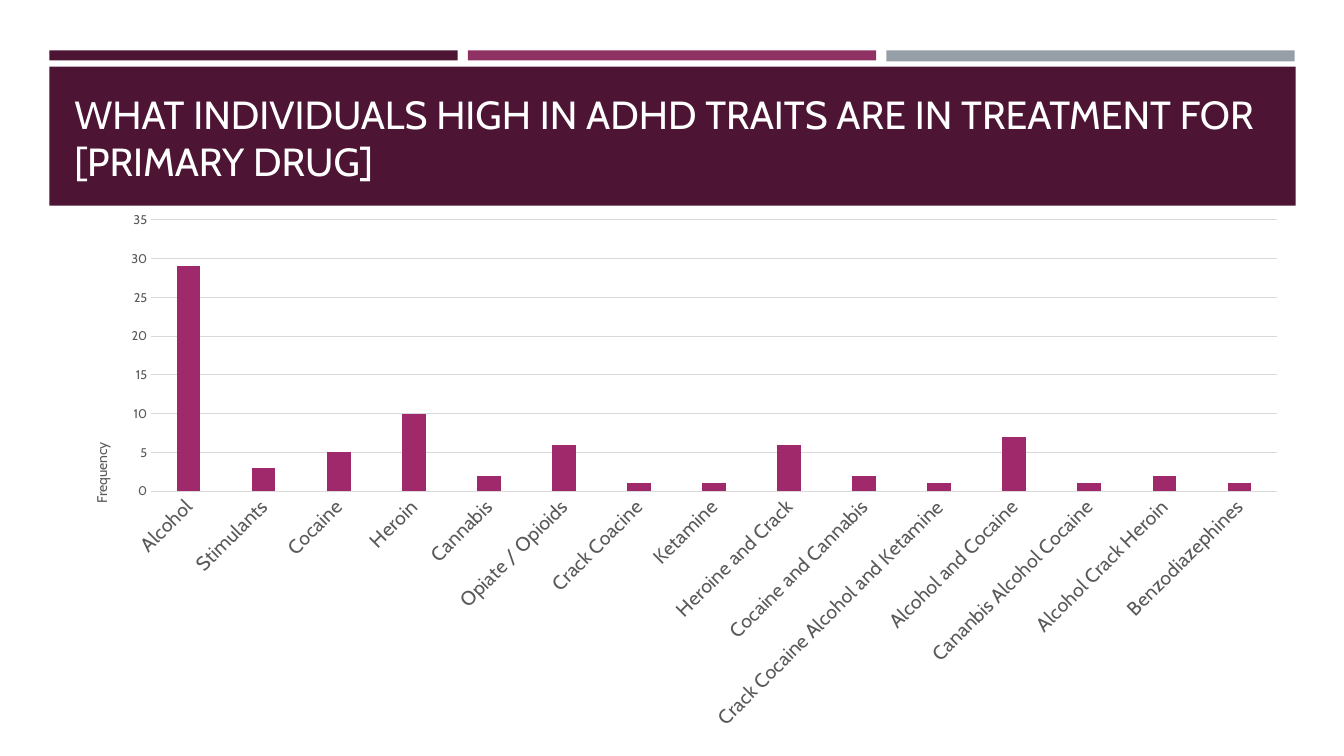
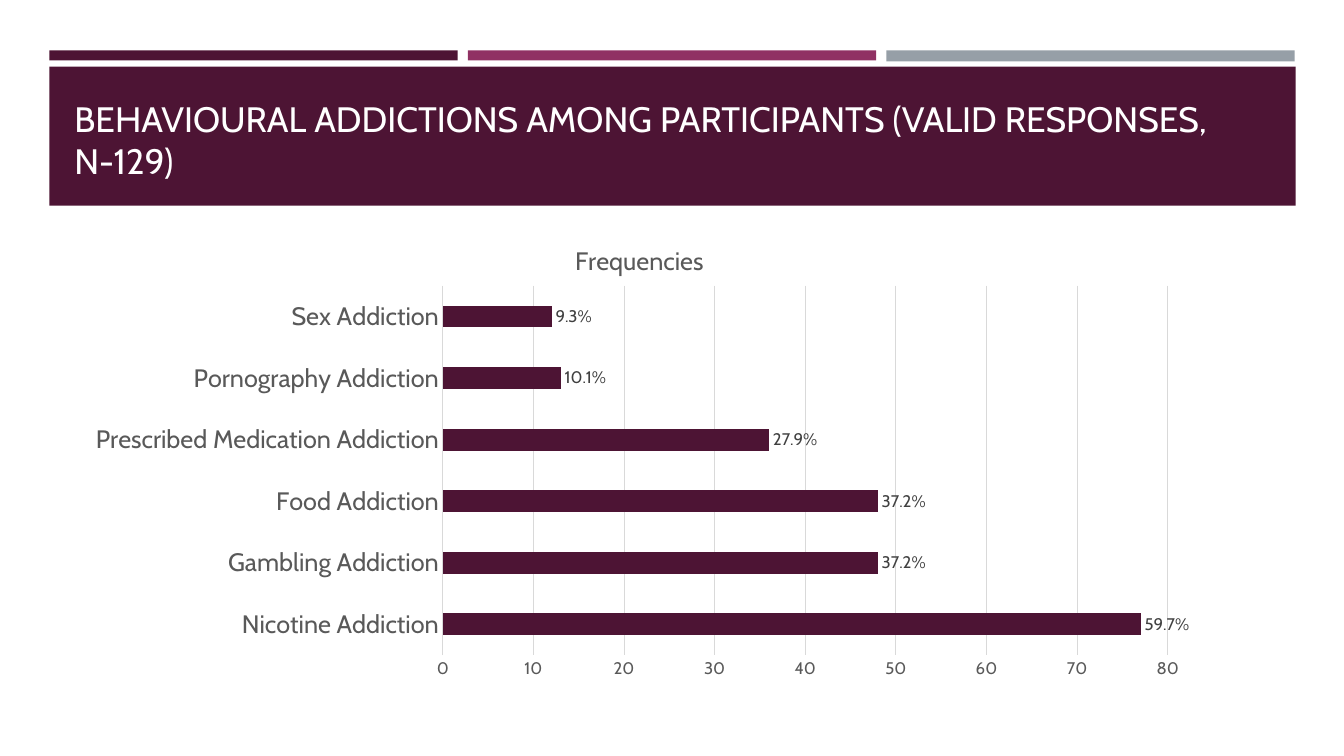
from pptx import Presentation
from pptx.chart.data import CategoryChartData
from pptx.dml.color import RGBColor
from pptx.enum.chart import XL_CHART_TYPE, XL_LABEL_POSITION, XL_TICK_MARK
from pptx.enum.shapes import MSO_SHAPE
from pptx.enum.text import MSO_ANCHOR
from pptx.oxml import parse_xml
from pptx.oxml.ns import nsdecls, qn
from pptx.util import Inches, Pt

FONT = "Cabin"
PLUM = "4D1434"
GREY = "595959"
GRID = "D9D9D9"
BANDS = [
    (0.49, 0.5, 4.05, 0.1, PLUM),
    (4.64, 0.5, 4.05, 0.1, "903163"),
    (8.79, 0.5, 4.05, 0.11, "969FA7"),
    (0.49, 0.66, 12.36, 1.38, PLUM),
]


def style_font(font, size, color):
    font.name = FONT
    font.size = Pt(size)
    font.bold = False
    font.color.rgb = RGBColor.from_string(color)


def place(element, index, **fractions):
    for layout in element.findall(qn("c:layout")):
        element.remove(layout)
    target = '<c:layoutTarget val="inner"/>' if "w" in fractions else ""
    modes = "".join(f'<c:{key}Mode val="edge"/>' for key in "xy")
    values = "".join(f'<c:{key} val="{value}"/>' for key, value in fractions.items())
    element.insert(index, parse_xml(
        f'<c:layout {nsdecls("c")}><c:manualLayout>{target}{modes}{values}'
        "</c:manualLayout></c:layout>"))


drugs = {
    "Alcohol": 29, "Stimulants": 3, "Cocaine": 5, "Heroin": 10, "Cannabis": 2,
    "Opiate / Opioids": 6, "Crack Coacine": 1, "Ketamine": 1,
    "Heroine and Crack": 6, "Cocaine and Cannabis": 2,
    "Crack Cocaine Alcohol and Ketamine": 1, "Alcohol and Cocaine": 7,
    "Cananbis Alcohol Cocaine": 1, "Alcohol Crack Heroin": 2,
    "Benzodiazephines": 1,
}
addictions = {
    "Nicotine Addiction": 77, "Gambling Addiction": 48, "Food Addiction": 48,
    "Prescribed Medication Addiction": 36, "Pornography Addiction": 13,
    "Sex Addiction": 12,
}
participants = 129

pages = [
    dict(title="WHAT INDIVIDUALS HIGH IN ADHD TRAITS ARE IN TREATMENT FOR [PRIMARY DRUG]",
         title_size=28, title_box=(0.64, 0.8, 12.06, 1.08),
         kind=XL_CHART_TYPE.COLUMN_CLUSTERED, values=drugs,
         chart_box=(0.64, 2, 12.27, 5.38),
         plot_area=dict(x=0.07, y=0.034, w=0.91, h=0.5),
         color="9F296B", gap=219, overlap=-27, maximum=35, step=5,
         category_size=14, value_size=9),
    dict(title="BEHAVIOURAL ADDICTIONS AMONG PARTICIPANTS (VALID RESPONSES, N-129)",
         title_size=25.2, title_box=(0.64, 1.13, 12.06, 0.72),
         kind=XL_CHART_TYPE.BAR_CLUSTERED, values=addictions,
         chart_box=(0.73, 2.13, 11.2, 4.7),
         plot_area=dict(x=0.327, y=0.15, w=0.642, h=0.78),
         color=PLUM, gap=182, overlap=0, maximum=80, step=10,
         category_size=18, value_size=12),
]

presentation = Presentation()
presentation.slide_width = Inches(13.33)
presentation.slide_height = Inches(7.5)
charts = []

for page in pages:
    slide = presentation.slides.add_slide(presentation.slide_layouts[6])

    for left, top, width, height, color in BANDS:
        band = slide.shapes.add_shape(
            MSO_SHAPE.RECTANGLE, Inches(left), Inches(top), Inches(width), Inches(height))
        band.shadow.inherit = False
        band.fill.solid()
        band.fill.fore_color.rgb = RGBColor.from_string(color)
        band.line.fill.background()

    title_box = slide.shapes.add_textbox(*map(Inches, page["title_box"]))
    text_frame = title_box.text_frame
    text_frame.word_wrap = True
    text_frame.vertical_anchor = MSO_ANCHOR.BOTTOM
    text_frame.text = page["title"]
    style_font(text_frame.paragraphs[0].runs[0].font, page["title_size"], "FFFFFF")

    chart_data = CategoryChartData()
    chart_data.categories = list(page["values"])
    chart_data.add_series("Series 1", list(page["values"].values()))
    chart = slide.shapes.add_chart(
        page["kind"], *map(Inches, page["chart_box"]), chart_data).chart
    charts.append(chart)
    style_font(chart.font, 10, "000000")
    chart.has_legend = False
    chart.has_title = False
    place(chart.plots[0]._element.getparent(), 0, **page["plot_area"])

    plot = chart.plots[0]
    plot.vary_by_categories = False
    plot.gap_width = page["gap"]
    plot.overlap = page["overlap"]
    fill = plot.series[0].format.fill
    fill.solid()
    fill.fore_color.rgb = RGBColor.from_string(page["color"])

    category_axis, value_axis = chart.category_axis, chart.value_axis
    for axis, size in ((category_axis, page["category_size"]), (value_axis, page["value_size"])):
        axis.major_tick_mark = XL_TICK_MARK.NONE
        axis.minor_tick_mark = XL_TICK_MARK.NONE
        style_font(axis.tick_labels.font, size, GREY)
    value_axis.minimum_scale = 0
    value_axis.maximum_scale = page["maximum"]
    value_axis.major_unit = page["step"]
    value_axis.format.line.fill.background()
    for line in (category_axis.format.line, value_axis.major_gridlines.format.line):
        line.color.rgb = RGBColor.from_string(GRID)
        line.width = Pt(0.75)

drug_chart, addiction_chart = charts

drug_chart.category_axis._element.find(qn("c:txPr")).find(qn("a:bodyPr")).set("rot", "-2700000")
axis_title = drug_chart.value_axis.axis_title
axis_title.text_frame.text = "Frequency"
style_font(axis_title.text_frame.paragraphs[0].runs[0].font, 10, GREY)
axis_title.text_frame._element.find(qn("a:bodyPr")).set("rot", "-5400000")
place(axis_title._element, 1, x=0.02, y=0.44)

chart_title = addiction_chart.chart_title
chart_title.text_frame.text = "Frequencies"
style_font(chart_title.text_frame.paragraphs[0].runs[0].font, 18, GREY)
place(chart_title._element, 1, x=0.44, y=0.05)

points = addiction_chart.plots[0].series[0].points
for index, count in enumerate(addictions.values()):
    label = points[index].data_label
    label.text_frame.text = f"{count / participants:.1%}"
    style_font(label.text_frame.paragraphs[0].runs[0].font, 12, "404040")
    label.position = XL_LABEL_POSITION.OUTSIDE_END

presentation.save("out.pptx")
